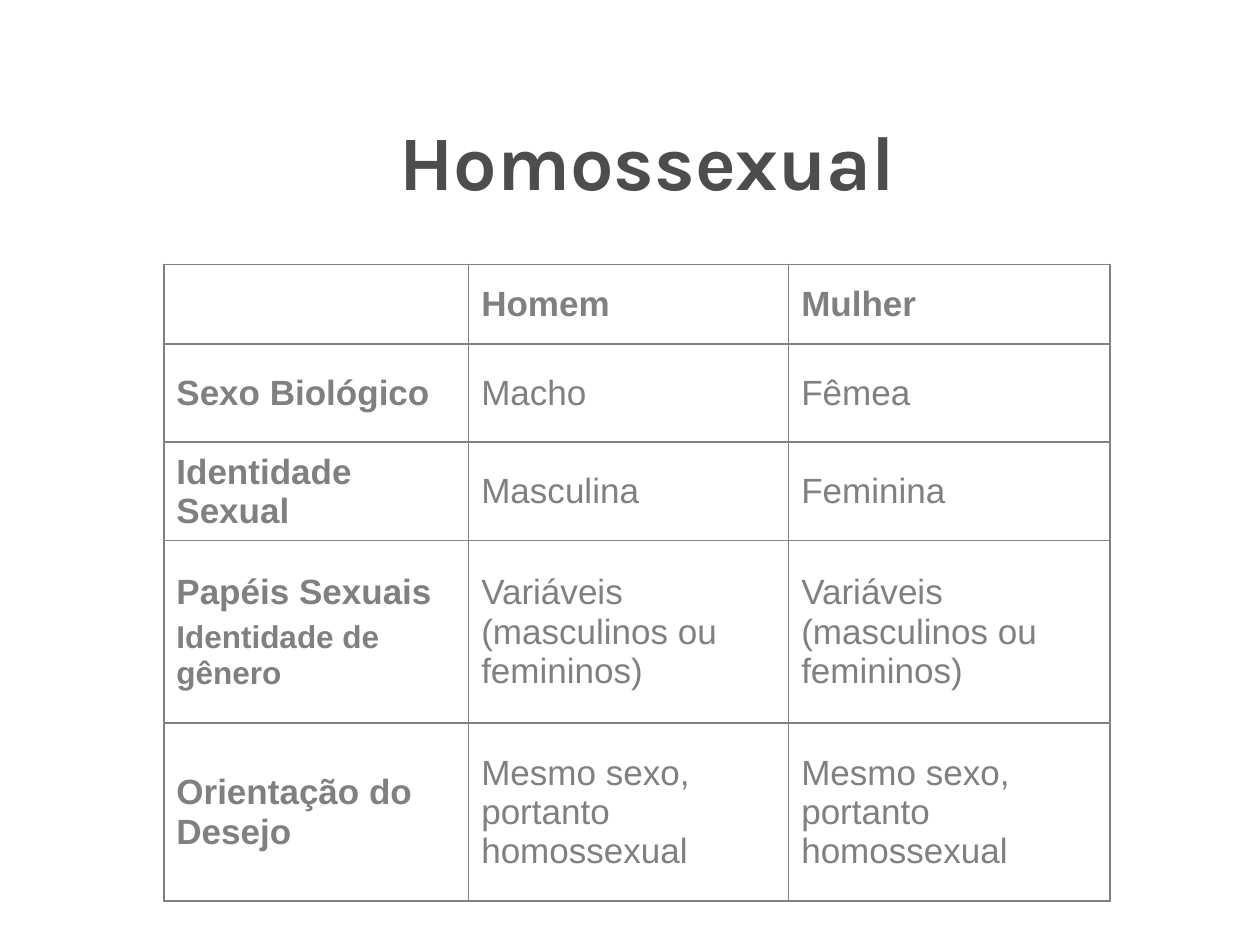
from pptx import Presentation
from pptx.dml.color import RGBColor
from pptx.enum.text import MSO_ANCHOR, PP_ALIGN
from pptx.oxml import parse_xml
from pptx.oxml.ns import nsdecls
from pptx.util import Inches, Pt

TITLE_COLOR = "4D4D4D"
GRAY = "808080"
COL_WIDTHS = [2.42, 2.54, 2.55]
ROW_HEIGHTS = [0.63, 0.78, 0.78, 1.45, 1.41]
ROWS = [
    ("", "Homem", "Mulher"),
    ("Sexo Biológico", "Macho", "Fêmea"),
    ("Identidade Sexual", "Masculina", "Feminina"),
    ("Papéis Sexuais\nIdentidade de gênero",) + ("Variáveis (masculinos ou femininos)",) * 2,
    ("Orientação do Desejo",) + ("Mesmo sexo, portanto homossexual",) * 2,
]


def color(value):
    return RGBColor.from_string(value)


def write(p, text, *, font="Arial", size=20, fill=GRAY, bold=False,
          align=PP_ALIGN.LEFT, line_spacing=1.0, before=0):
    p.alignment = align
    p.line_spacing = line_spacing
    p.space_before = Pt(before)
    p.font.size = Pt(size)
    if not text:
        return
    r = p.add_run()
    r.text = text
    r.font.name = font
    r.font.size = Pt(size)
    r.font.bold = bold
    r.font.color.rgb = color(fill)


class SlideBuilder:
    def __init__(self, prs):
        self.s = prs.slides.add_slide(prs.slide_layouts[6])
        self.border_color = GRAY
        self.border_width = Pt(1)

    def title(self, text, left, top, width, height):
        sp = self.s.shapes.add_textbox(Inches(left), Inches(top), Inches(width), Inches(height))
        tf = sp.text_frame
        tf.word_wrap = True
        tf.vertical_anchor = MSO_ANCHOR.MIDDLE
        write(tf.paragraphs[0], text, font="Karla", size=44, fill=TITLE_COLOR,
              bold=True, align=PP_ALIGN.CENTER)

    def borders(self, cell):
        tc_pr = cell._tc.get_or_add_tcPr()
        for side in "LRTB":
            tc_pr.append(parse_xml(
                f'<a:ln{side} {nsdecls("a")} w="{self.border_width}"><a:solidFill>'
                f'<a:srgbClr val="{self.border_color}"/></a:solidFill></a:ln{side}>'))

    def cell(self, cell, text, bold):
        self.borders(cell)
        cell.fill.background()
        cell.vertical_anchor = MSO_ANCHOR.MIDDLE
        tf = cell.text_frame
        for i, line in enumerate(text.split("\n")):
            p = tf.add_paragraph() if i else tf.paragraphs[0]
            write(p, line, bold=bold, size=18 if i else 20,
                  line_spacing=1.01, before=4.5 if i else 0)

    def table(self, rows, left, top, widths, heights):
        """Draw a bordered grid with a bold first row and first column."""
        table = self.s.shapes.add_table(
            len(rows), len(widths), Inches(left), Inches(top),
            Inches(sum(widths)), Inches(sum(heights))).table
        table.first_row = table.horz_banding = False
        for column, width in zip(table.columns, widths):
            column.width = Inches(width)
        for row, height in zip(table.rows, heights):
            row.height = Inches(height)
        for i, texts in enumerate(rows):
            for j, text in enumerate(texts):
                self.cell(table.cell(i, j), text, bold=i == 0 or j == 0)


def main():
    prs = Presentation()
    prs.slide_width, prs.slide_height = Inches(10), Inches(7.5)
    slide = SlideBuilder(prs)
    slide.title("Homossexual", 1.14, 0.76, 8, 1.01)
    slide.table(ROWS, 1.3, 2.1, COL_WIDTHS, ROW_HEIGHTS)
    prs.save("out.pptx")


if __name__ == "__main__":
    main()
